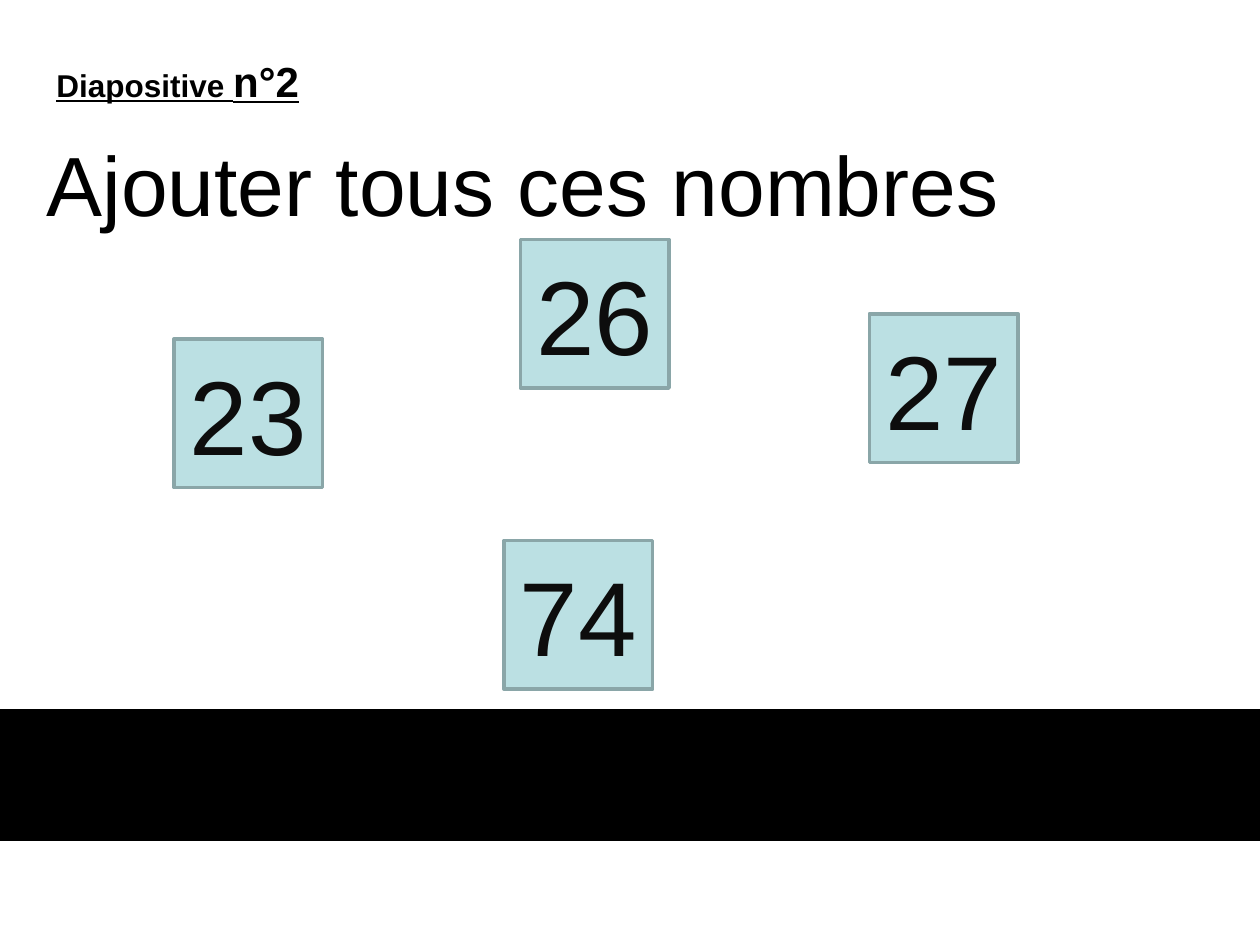
import dataclasses

import pptx
import pptx.dml.color
import pptx.enum.shapes
import pptx.enum.text
import pptx.util

Inches = pptx.util.Inches
Pt = pptx.util.Pt
ALIGN = pptx.enum.text.PP_ALIGN
MIDDLE = pptx.enum.text.MSO_ANCHOR.MIDDLE
FIT = pptx.enum.text.MSO_AUTO_SIZE

HUES = {"black": "000000", "ink": "0D0D0D", "tile": "BBE0E3", "edge": "8AA6A8"}
SIDE = 1.18


@dataclasses.dataclass
class Tile:
    number: str
    left: float
    top: float


TILES = [
    Tile("23", 1.38, 2.69),
    Tile("27", 6.9, 2.49),
    Tile("26", 4.13, 1.9),
    Tile("74", 4, 4.29),
]


def color(name: str) -> pptx.dml.color.RGBColor:
    return pptx.dml.color.RGBColor.from_string(HUES[name])


def style(font, size: int, hue: str) -> None:
    font.name = "Arial"
    font.size = Pt(size)
    font.color.rgb = color(hue)


def place(shape, left: float, top: float, width: float, height: float) -> None:
    shape.left, shape.top = Inches(left), Inches(top)
    shape.width, shape.height = Inches(width), Inches(height)


def add_box(slide, left: float, top: float, width: float, height: float,
            fill: str, edge: str):
    box = slide.shapes.add_shape(
        pptx.enum.shapes.MSO_SHAPE.RECTANGLE,
        Inches(left), Inches(top), Inches(width), Inches(height))
    box.shadow.inherit = False
    box.fill.solid()
    box.fill.fore_color.rgb = color(fill)
    box.line.color.rgb = color(edge)
    box.line.width = Pt(2)
    return box


def add_tile(slide, tile: Tile) -> None:
    box = add_box(slide, tile.left, tile.top, SIDE, SIDE, "tile", "edge")
    frame = box.text_frame
    frame.vertical_anchor = MIDDLE
    frame.text = tile.number
    line = frame.paragraphs[0]
    line.alignment = ALIGN.CENTER
    style(line.font, 60, "ink")


def add_label(slide) -> None:
    label = slide.shapes.add_textbox(
        Inches(0.35), Inches(0.39), Inches(4.8), Inches(0.51))
    frame = label.text_frame
    frame.word_wrap = True
    frame.auto_size = FIT.SHAPE_TO_FIT_TEXT
    line = frame.paragraphs[0]
    line.space_before = Pt(3)
    for text, size in (("Diapositive ", 18), ("n°2", 24)):
        run = line.add_run()
        run.text = text
        style(run.font, size, "black")
        run.font.bold = True
        run.font.underline = True


def set_title(slide) -> None:
    title = slide.shapes.title
    place(title, 0.27, 0.65, 8.5, 1.61)
    frame = title.text_frame
    frame.text = "Ajouter tous ces nombres"
    frame.vertical_anchor = MIDDLE
    frame.auto_size = FIT.NONE
    line = frame.paragraphs[0]
    line.alignment = ALIGN.LEFT
    style(line.font, 48, "black")


def main() -> None:
    deck = pptx.Presentation()
    deck.slide_width, deck.slide_height = Inches(10), Inches(7.5)
    slide = deck.slides.add_slide(deck.slide_layouts[5])
    set_title(slide)
    add_label(slide)
    add_box(slide, 0, 5.64, 10, 1.02, "black", "black")
    for tile in TILES:
        add_tile(slide, tile)
    deck.save("out.pptx")


if __name__ == "__main__":
    main()
